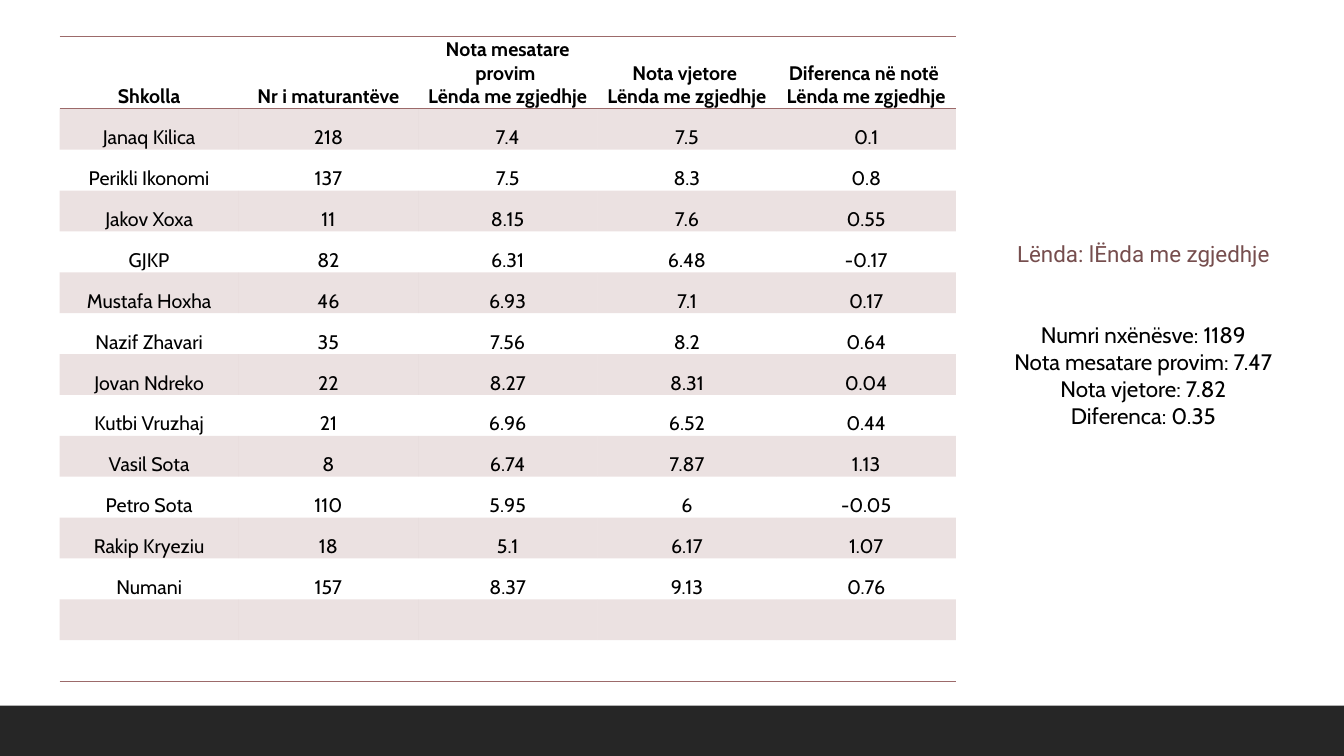
from copy import deepcopy
from dataclasses import dataclass

from lxml.etree import SubElement
from pptx import Presentation
from pptx.dml.color import RGBColor
from pptx.enum.shapes import MSO_SHAPE
from pptx.enum.text import MSO_ANCHOR, MSO_AUTO_SIZE, PP_ALIGN
from pptx.oxml import parse_xml
from pptx.oxml.ns import nsdecls, qn
from pptx.util import Inches, Pt


@dataclass(frozen=True)
class Theme:
    dark: str = "262626"
    rose: str = "9C6A6A"
    plum: str = "764E4E"
    ink: str = "000000"
    font: str = "Cabin"
    head: str = "Roboto"
    small: int = 14
    large: int = 16
    tint: int = 20000
    plain: str = "{2D5ABB26-0587-4C30-8999-92F81FD0307C}"


THEME = Theme()

HEADS = [
    "Shkolla",
    "Nr i maturantëve",
    "Nota mesatare provim \vLënda me zgjedhje",
    "Nota vjetore \vLënda me zgjedhje",
    "Diferenca në notë \vLënda me zgjedhje",
]

SCHOOLS = [
    ["Janaq Kilica", "218", "7.4", "7.5", "0.1"],
    ["Perikli Ikonomi", "137", "7.5", "8.3", "0.8"],
    ["Jakov Xoxa", "11", "8.15", "7.6", "0.55"],
    ["GJKP", "82", "6.31", "6.48", "-0.17"],
    ["Mustafa Hoxha", "46", "6.93", "7.1", "0.17"],
    ["Nazif Zhavari", "35", "7.56", "8.2", "0.64"],
    ["Jovan Ndreko", "22", "8.27", "8.31", "0.04"],
    ["Kutbi Vruzhaj", "21", "6.96", "6.52", "0.44"],
    ["Vasil Sota", "8", "6.74", "7.87", "1.13"],
    ["Petro Sota", "110", "5.95", "6", "-0.05"],
    ["Rakip Kryeziu", "18", "5.1", "6.17", "1.07"],
    ["Numani", "157", "8.37", "9.13", "0.76"],
]

TOTALS = [
    "Numri nxënësve: 1189",
    "Nota mesatare provim: 7.47",
    "Nota vjetore: 7.82",
    "Diferenca: 0.35",
]


def format_text(frame, size, font, color, bold=False):
    for para in frame.paragraphs:
        para.alignment = PP_ALIGN.CENTER
        para.space_before = Pt(0)
        for run in para.runs:
            run.font.size = Pt(size)
            run.font.name = font
            run.font.bold = bold
            run.font.color.rgb = RGBColor.from_string(color)


def match_breaks(frame):
    for para in frame.paragraphs:
        for item in para._p.findall(qn("a:br")):
            item.insert(0, deepcopy(para.runs[0].font._element))


def add_edge(cell, side):
    line = parse_xml(
        f'<a:{side} {nsdecls("a")} w="12700"><a:solidFill>'
        f'<a:srgbClr val="{THEME.rose}"/></a:solidFill></a:{side}>'
    )
    props = cell._tc.get_or_add_tcPr()
    props.insert(len(props.findall(qn("a:lnT"))), line)


def fill_cell(cell, tinted):
    if not tinted:
        cell.fill.background()
        return
    cell.fill.solid()
    cell.fill.fore_color.rgb = RGBColor.from_string(THEME.rose)
    color = cell._tc.tcPr.find(".//" + qn("a:srgbClr"))
    SubElement(color, qn("a:alpha"), val=str(THEME.tint))


def set_cell(cell, text, row, last):
    cell.text = text
    cell.vertical_anchor = MSO_ANCHOR.BOTTOM
    cell.margin_left = cell.margin_right = cell.margin_top = Inches(0.01)
    cell.margin_bottom = 0
    format_text(cell.text_frame, THEME.small, THEME.font, THEME.ink, row == 0)
    match_breaks(cell.text_frame)
    fill_cell(cell, row % 2 == 1)
    if row == 0:
        add_edge(cell, "lnT")
    if row in (0, last):
        add_edge(cell, "lnB")


def add_grades(slide):
    blank = [""] * len(HEADS)
    rows = [HEADS, *SCHOOLS, blank, blank]
    last = len(rows) - 1
    width, height, top = Inches(8.89), Inches(6.39), Inches(0.71)
    frame = slide.shapes.add_table(
        len(rows), len(HEADS), Inches(0.59), Inches(0.36), width, height
    )
    for style in frame.element.iter(qn("a:tableStyleId")):
        style.text = THEME.plain
    table = frame.table
    table.first_row = table.horz_banding = False
    for col in table.columns:
        col.width = width // len(HEADS)
    for r, values in enumerate(rows):
        table.rows[r].height = (height - top) // last if r else top
        for c, text in enumerate(values):
            set_cell(table.cell(r, c), text, r, last)


def place_text(holder, lines, top, height, font, color):
    holder.left, holder.top = Inches(9.35), Inches(top)
    holder.width, holder.height = Inches(3.98), Inches(height)
    frame = holder.text_frame
    frame.text = "\n".join(lines)
    frame.word_wrap = True
    frame.auto_size = MSO_AUTO_SIZE.NONE
    frame.vertical_anchor = MSO_ANCHOR.TOP
    for para in frame.paragraphs:
        props = para._p.get_or_add_pPr()
        props.set("marL", "0")
        props.set("indent", "0")
        SubElement(props, qn("a:buNone"))
    format_text(frame, THEME.large, font, color)


def add_band(slide, width):
    band = slide.shapes.add_shape(
        MSO_SHAPE.RECTANGLE, 0, Inches(7), width, Inches(0.5)
    )
    band.shadow.inherit = False
    band.fill.solid()
    band.fill.fore_color.rgb = RGBColor.from_string(THEME.dark)
    band.line.fill.background()


def main():
    deck = Presentation()
    deck.slide_width = Inches(13.33)
    deck.slide_height = Inches(7.5)
    slide = deck.slides.add_slide(deck.slide_layouts[1])
    add_band(slide, deck.slide_width)
    add_grades(slide)
    place_text(slide.shapes.title, ["Lënda: lËnda me zgjedhje"],
               2.33, 0.4, THEME.head, THEME.plum)
    place_text(slide.placeholders[1], TOTALS,
               3.14, 1.18, THEME.font, THEME.ink)
    deck.save("out.pptx")


if __name__ == "__main__":
    main()
